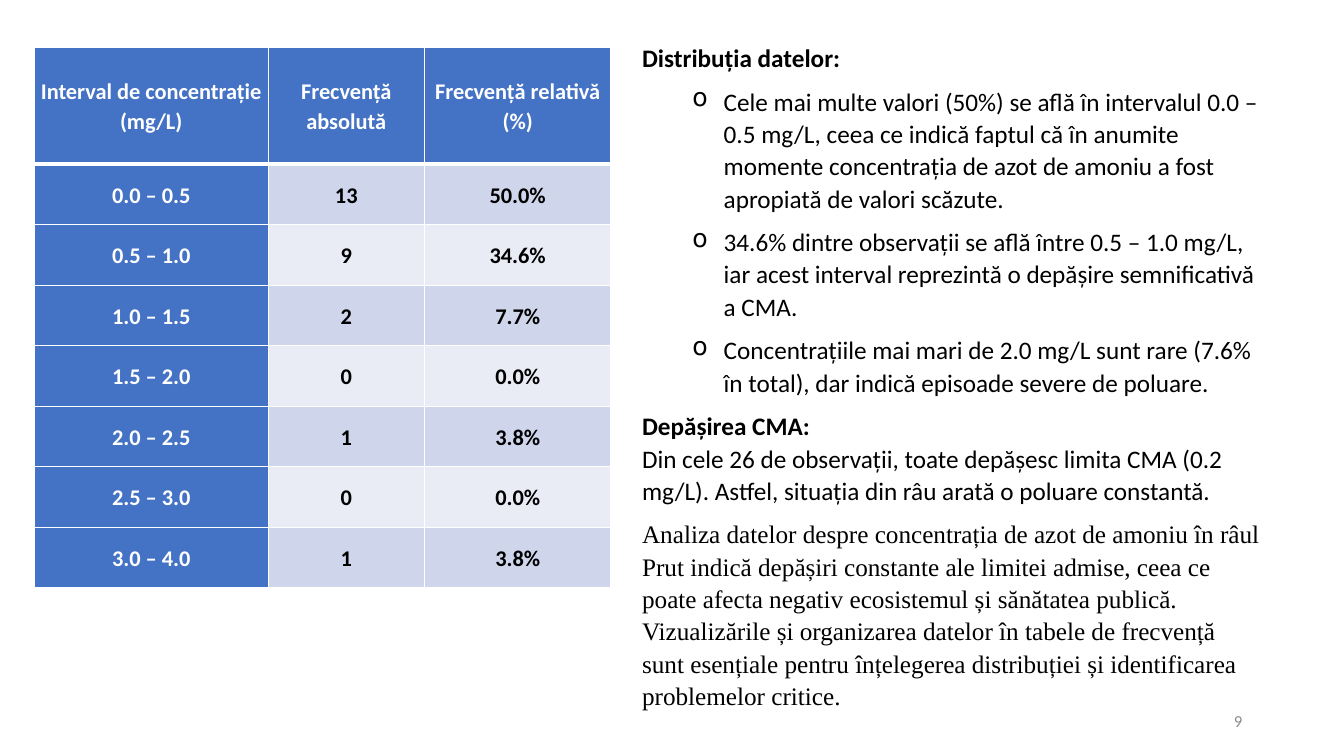
from lxml.etree import SubElement
from pptx import Presentation
from pptx.dml.color import RGBColor
from pptx.enum.text import MSO_ANCHOR as Anchor, PP_ALIGN as Align
from pptx.oxml.ns import qn
from pptx.util import Inches, Pt

WHITE, BLACK, GRAY = "FFFFFF", "000000", "8C8C8C"
BLUE, BAND_DARK, BAND_LIGHT = "4472C4", "CFD5EA", "E9EBF5"

COLUMN_WIDTHS = [2.32, 1.55, 1.85]
HEADER_HEIGHT, ROW_HEIGHT = 1.16, 0.6
FREQUENCIES = [
    ["Interval de concentrație (mg/L)", "Frecvență absolută", "Frecvență relativă (%)"],
    ["0.0 – 0.5", "13", "50.0%"],
    ["0.5 – 1.0", "9", "34.6%"],
    ["1.0 – 1.5", "2", "7.7%"],
    ["1.5 – 2.0", "0", "0.0%"],
    ["2.0 – 2.5", "1", "3.8%"],
    ["2.5 – 3.0", "0", "0.0%"],
    ["3.0 – 4.0", "1", "3.8%"],
]

# Each paragraph: is it a bullet, then its runs as (text, font changes)
BOLD = {"bold": True}
COMMENTARY = [
    (False, [("Distribuția datelor:", BOLD)]),
    (True, [("Cele mai multe valori (50%) se află în intervalul 0.0 – 0.5 mg/L, ceea ce "
             "indică faptul că în anumite momente concentrația de azot de amoniu a fost "
             "apropiată de valori scăzute.", {})]),
    (True, [("34.6% dintre observații se află între 0.5 – 1.0 mg/L, iar acest interval "
             "reprezintă o depășire semnificativă a CMA.", {})]),
    (True, [("Concentrațiile mai mari de 2.0 mg/L sunt rare (7.6% în total), dar indică "
             "episoade severe de poluare.", {})]),
    (False, [("Depășirea CMA:", BOLD),
             ("\n", {}),
             ("Din cele 26 de observații, toate depășesc limita CMA (0.2 mg/L). Astfel, "
              "situația din râu arată o poluare constantă.", {})]),
    (False, [("Analiza datelor despre concentrația de azot de amoniu în râul Prut indică "
              "depășiri constante ale limitei admise, ceea ce poate afecta negativ "
              "ecosistemul și sănătatea publică. Vizualizările și organizarea datelor în "
              "tabele de frecvență sunt esențiale pentru înțelegerea distribuției și "
              "identificarea problemelor critice.", {"name": "Times New Roman"})]),
]


def color(hex_value):
    return RGBColor.from_string(hex_value)


def set_attributes(target, values):
    for name, value in values.items():
        setattr(target, name, value)


def add_run(paragraph, text, size, hex_value, **changes):
    run = paragraph.add_run()
    run.text = text
    set_attributes(run.font, {"name": "Calibri", "size": Pt(size), "bold": False, **changes})
    run.font.color.rgb = color(hex_value)


def space_paragraph(paragraph, alignment):
    set_attributes(paragraph, {"alignment": alignment, "line_spacing": 1.07,
                               "space_after": Pt(8)})


def add_borders(cell, bottom_width):
    properties = cell._tc.get_or_add_tcPr()
    for side, width in {"L": 1, "R": 1, "T": 1, "B": bottom_width}.items():
        line = SubElement(properties, qn(f"a:ln{side}"), w=str(Pt(width)))
        SubElement(SubElement(line, qn("a:solidFill")), qn("a:srgbClr"), val=WHITE)


def add_bullet(paragraph, left, hanging):
    properties = paragraph._p.get_or_add_pPr()
    properties.set("lvl", "1")
    properties.set("marL", str(Inches(left)))
    properties.set("indent", str(-Inches(hanging)))
    SubElement(properties, qn("a:buChar"), char="o")


def add_text_frame(slide, left, top, width, height, anchor):
    box = slide.shapes.add_textbox(Inches(left), Inches(top), Inches(width), Inches(height))
    set_attributes(box.text_frame, {"word_wrap": True, "vertical_anchor": anchor})
    return box.text_frame


def add_frequency_table(slide, left, top):
    height = HEADER_HEIGHT + ROW_HEIGHT * (len(FREQUENCIES) - 1)
    table = slide.shapes.add_table(
        len(FREQUENCIES), len(COLUMN_WIDTHS), Inches(left), Inches(top),
        Inches(sum(COLUMN_WIDTHS)), Inches(height)).table
    for column, width in zip(table.columns, COLUMN_WIDTHS):
        column.width = Inches(width)
    margins = {f"margin_{side}": Inches(0.01) for side in ("left", "right", "top", "bottom")}
    for row_index, texts in enumerate(FREQUENCIES):
        is_header = row_index == 0
        table.rows[row_index].height = Inches(HEADER_HEIGHT if is_header else ROW_HEIGHT)
        band = BAND_DARK if row_index % 2 else BAND_LIGHT
        for column_index, text in enumerate(texts):
            is_heading = is_header or column_index == 0
            cell = table.cell(row_index, column_index)
            set_attributes(cell, {"vertical_anchor": Anchor.MIDDLE, **margins})
            add_borders(cell, 3 if is_header else 1)
            cell.fill.solid()
            cell.fill.fore_color.rgb = color(BLUE if is_heading else band)
            paragraph = cell.text_frame.paragraphs[0]
            space_paragraph(paragraph, Align.CENTER)
            add_run(paragraph, text, 16, WHITE if is_heading else BLACK, bold=True)


def add_commentary(slide, left, top, width, height):
    frame = add_text_frame(slide, left, top, width, height, Anchor.TOP)
    for index, (is_bullet, runs) in enumerate(COMMENTARY):
        paragraph = frame.add_paragraph() if index else frame.paragraphs[0]
        space_paragraph(paragraph, Align.LEFT)
        if is_bullet:
            add_bullet(paragraph, 0.81, 0.31)
        for text, changes in runs:
            if text == "\n":
                paragraph.add_line_break()
            else:
                add_run(paragraph, text, 18, BLACK, **changes)


def add_slide_number(slide, left, top, width, height):
    frame = add_text_frame(slide, left, top, width, height, Anchor.MIDDLE)
    paragraph = frame.paragraphs[0]
    paragraph.alignment = Align.RIGHT
    add_run(paragraph, "9", 12, GRAY)


def main():
    presentation = Presentation()
    presentation.slide_width = Inches(13.33)
    presentation.slide_height = Inches(7.5)
    blank_layout = presentation.slide_layouts[6]
    slide = presentation.slides.add_slide(blank_layout)
    add_slide_number(slide, 9.42, 6.95, 3, 0.4)
    add_frequency_table(slide, 0.34, 0.47)
    add_commentary(slide, 6.27, 0.35, 6.36, 6.8)
    presentation.save("out.pptx")


if __name__ == "__main__":
    main()
